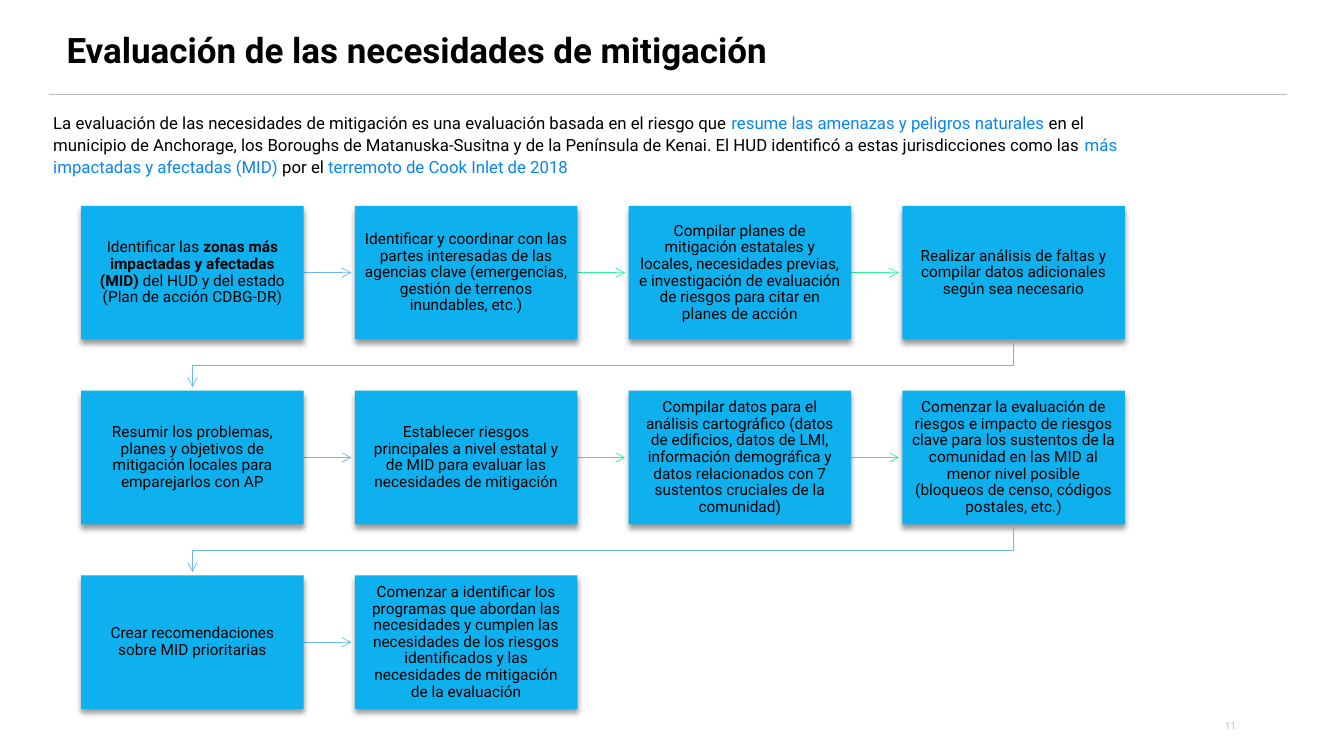
from lxml import etree
from pptx import Presentation
from pptx.dml.color import RGBColor
from pptx.enum.shapes import MSO_CONNECTOR, MSO_SHAPE
from pptx.enum.text import MSO_ANCHOR, MSO_AUTO_SIZE, PP_ALIGN
from pptx.oxml import parse_xml
from pptx.oxml.ns import qn
from pptx.util import Pt

STRAIGHT = MSO_CONNECTOR.STRAIGHT
RECTANGLE = MSO_SHAPE.RECTANGLE
MIDDLE = MSO_ANCHOR.MIDDLE
NO_AUTOFIT = MSO_AUTO_SIZE.NONE
LEFT, CENTER, RIGHT = PP_ALIGN.LEFT, PP_ALIGN.CENTER, PP_ALIGN.RIGHT

BLACK = RGBColor(0x00, 0x00, 0x00)
GRAY = RGBColor(0xBC, 0xBE, 0xC0)
LINK_BLUE = RGBColor(0x07, 0x85, 0xF2)
BOX_BLUE = RGBColor(0x0E, 0xB1, 0xEE)
ARROW_BLUE = RGBColor(0x67, 0xB6, 0xFB)
ARROW_GREEN = RGBColor(0x30, 0xF2, 0x98)

BOX_SHADOW = (
    '<a:effectLst xmlns:a="http://schemas.openxmlformats.org/drawingml/2006/main">'
    '<a:outerShdw blurRad="50800" dist="38100" dir="5400000" rotWithShape="0">'
    '<a:srgbClr val="000000"><a:alpha val="40000"/></a:srgbClr>'
    '</a:outerShdw></a:effectLst>'
)


def write(shape, runs, size, align, spacing, inset, anchor=None):
    """Fill a shape with one paragraph of (text, colour, bold) runs."""
    frame = shape.text_frame
    frame.word_wrap = True
    frame.auto_size = NO_AUTOFIT
    frame.margin_left = frame.margin_right = Pt(inset[0])
    frame.margin_top = frame.margin_bottom = Pt(inset[1])
    if anchor is not None:
        frame.vertical_anchor = anchor
    paragraph = frame.paragraphs[0]
    paragraph.alignment = align
    paragraph.line_spacing = spacing
    for text, color, bold in runs:
        run = paragraph.add_run()
        run.text = text
        run.font.name = "Roboto"
        run.font.size = Pt(size)
        run.font.bold = bold
        run.font.color.rgb = color


def style_line(shape, color, arrow=True):
    """Thin line without shadow, with an optional open arrowhead at its end."""
    shape.line.color.rgb = color
    shape.line.width = Pt(0.5)
    if arrow:
        etree.SubElement(shape.line._get_or_add_ln(), qn("a:tailEnd"), type="arrow")
    etree.SubElement(shape._element.spPr, qn("a:effectLst"))


presentation = Presentation()
presentation.slide_width = Pt(960)
presentation.slide_height = Pt(540)
slide = presentation.slides.add_slide(presentation.slide_layouts[5])
shapes = slide.shapes

# Title and rule
title = shapes.title
title.left, title.top, title.width, title.height = Pt(47.5), Pt(7), Pt(842.5), Pt(60)
write(title, [("Evaluación de las necesidades de mitigación", BLACK, True)],
      25, LEFT, 0.9, (0, 3.6), MIDDLE)
rule = shapes.add_connector(STRAIGHT, Pt(35), Pt(67.5), Pt(919.5), Pt(67.5))
style_line(rule, GRAY, arrow=False)

# Introduction
introduction = shapes.add_textbox(Pt(38), Pt(75.5), Pt(766), Pt(111.5))
write(introduction, [
    ("La evaluación de las necesidades de mitigación es una evaluación basada en el riesgo que ", BLACK, False),
    ("resume las amenazas y peligros naturales ", LINK_BLUE, False),
    ("en el municipio de Anchorage, los Boroughs de Matanuska-Susitna y de la Península de Kenai. "
     "El HUD identificó a estas jurisdicciones como las ", BLACK, False),
    ("más impactadas y afectadas (MID) ", LINK_BLUE, False),
    ("por el ", BLACK, False),
    ("terremoto de Cook Inlet de 2018", LINK_BLUE, False),
], 12, LEFT, 1.1, (0, 3.6))

# Process steps, one list per row; each step is a list of (text, bold)
STEP_ROWS = [
    [
        [("Identificar las ", False), ("zonas más impactadas y afectadas (MID) ", True),
         ("del HUD y del estado (Plan de acción CDBG-DR)", False)],
        [("Identificar y coordinar con las partes interesadas de las agencias clave "
          "(emergencias, gestión de terrenos inundables, etc.)", False)],
        [("Compilar planes de mitigación estatales y locales, necesidades previas, "
          "e investigación de evaluación de riesgos para citar en planes de acción", False)],
        [("Realizar análisis de faltas y compilar datos adicionales según sea necesario", False)],
    ],
    [
        [("Resumir los problemas, planes y objetivos de mitigación locales para "
          "emparejarlos con AP", False)],
        [("Establecer riesgos principales a nivel estatal y de MID para evaluar las "
          "necesidades de mitigación", False)],
        [("Compilar datos para el análisis cartográfico (datos de edificios, datos de LMI, "
          "información demográfica y datos relacionados con 7 sustentos cruciales de la "
          "comunidad)", False)],
        [("Comenzar la evaluación de riesgos e impacto de riesgos clave para los sustentos "
          "de la comunidad en las MID al menor nivel posible (bloqueos de censo, códigos "
          "postales, etc.)", False)],
    ],
    [
        [("Crear recomendaciones sobre MID prioritarias", False)],
        [("Comenzar a identificar los programas que abordan las necesidades y cumplen las "
          "necesidades de los riesgos identificados y las necesidades de mitigación de la "
          "evaluación", False)],
    ],
]
GRID_LEFT, GRID_TOP = 58, 147
BOX_WIDTH, BOX_HEIGHT = 159, 95.5
COLUMN_STEP, ROW_STEP = 195.5, 132
ARROW_LENGTH = 34

for row, steps in enumerate(STEP_ROWS):
    top = GRID_TOP + row * ROW_STEP
    bottom = top + BOX_HEIGHT
    middle = top + BOX_HEIGHT / 2
    for column, step in enumerate(steps):
        left = GRID_LEFT + column * COLUMN_STEP
        right = left + BOX_WIDTH

        # Arrow to the next step in the row
        if column < len(steps) - 1:
            arrow = shapes.add_connector(
                STRAIGHT, Pt(right), Pt(middle), Pt(right + ARROW_LENGTH), Pt(middle))
            style_line(arrow, ARROW_BLUE if column == 0 else ARROW_GREEN)

        # Step box
        box = shapes.add_shape(RECTANGLE, Pt(left), Pt(top), Pt(BOX_WIDTH), Pt(BOX_HEIGHT))
        box.fill.solid()
        box.fill.fore_color.rgb = BOX_BLUE
        box.line.fill.background()
        box._element.spPr.append(parse_xml(BOX_SHADOW))
        write(box, [(text, BLACK, bold) for text, bold in step],
              11, CENTER, 0.9, (6.5, 6.5), MIDDLE)

    # Bent arrow from the last step down to the start of the next row
    if row < len(STEP_ROWS) - 1:
        start = left + BOX_WIDTH / 2
        end = GRID_LEFT + BOX_WIDTH / 2
        turn = bottom + 18.5
        builder = shapes.build_freeform(Pt(start), Pt(bottom))
        builder.add_line_segments(
            [(Pt(start), Pt(turn)), (Pt(end), Pt(turn)), (Pt(end), Pt(bottom + ARROW_LENGTH))],
            close=False)
        bent_arrow = builder.convert_to_shape()
        bent_arrow.fill.background()
        style_line(bent_arrow, ARROW_BLUE)

# Slide number
number = shapes.add_textbox(Pt(700), Pt(504), Pt(190), Pt(29))
write(number, [("11", GRAY, False)], 7, RIGHT, 1.0, (7.2, 3.6), MIDDLE)

presentation.save("out.pptx")
